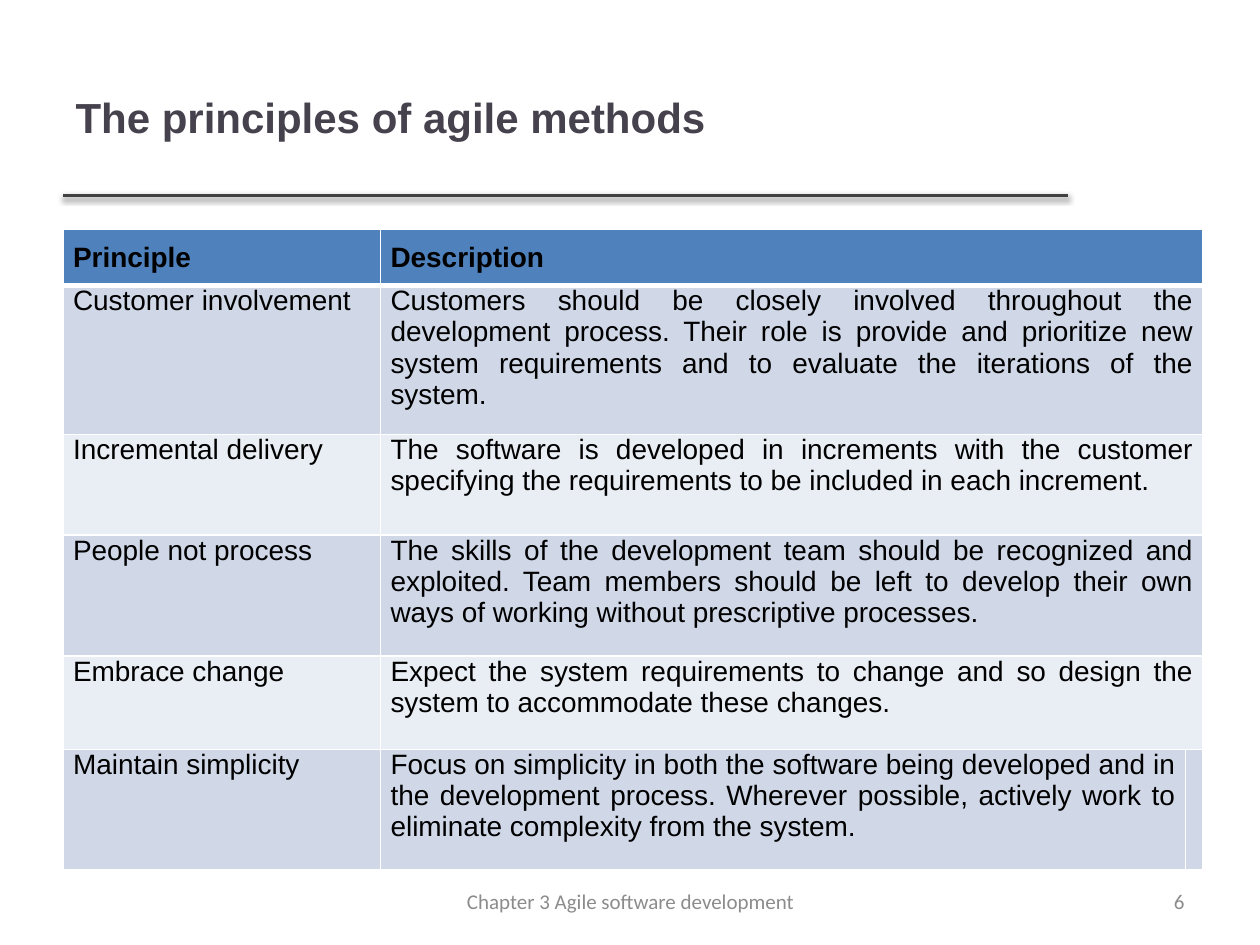
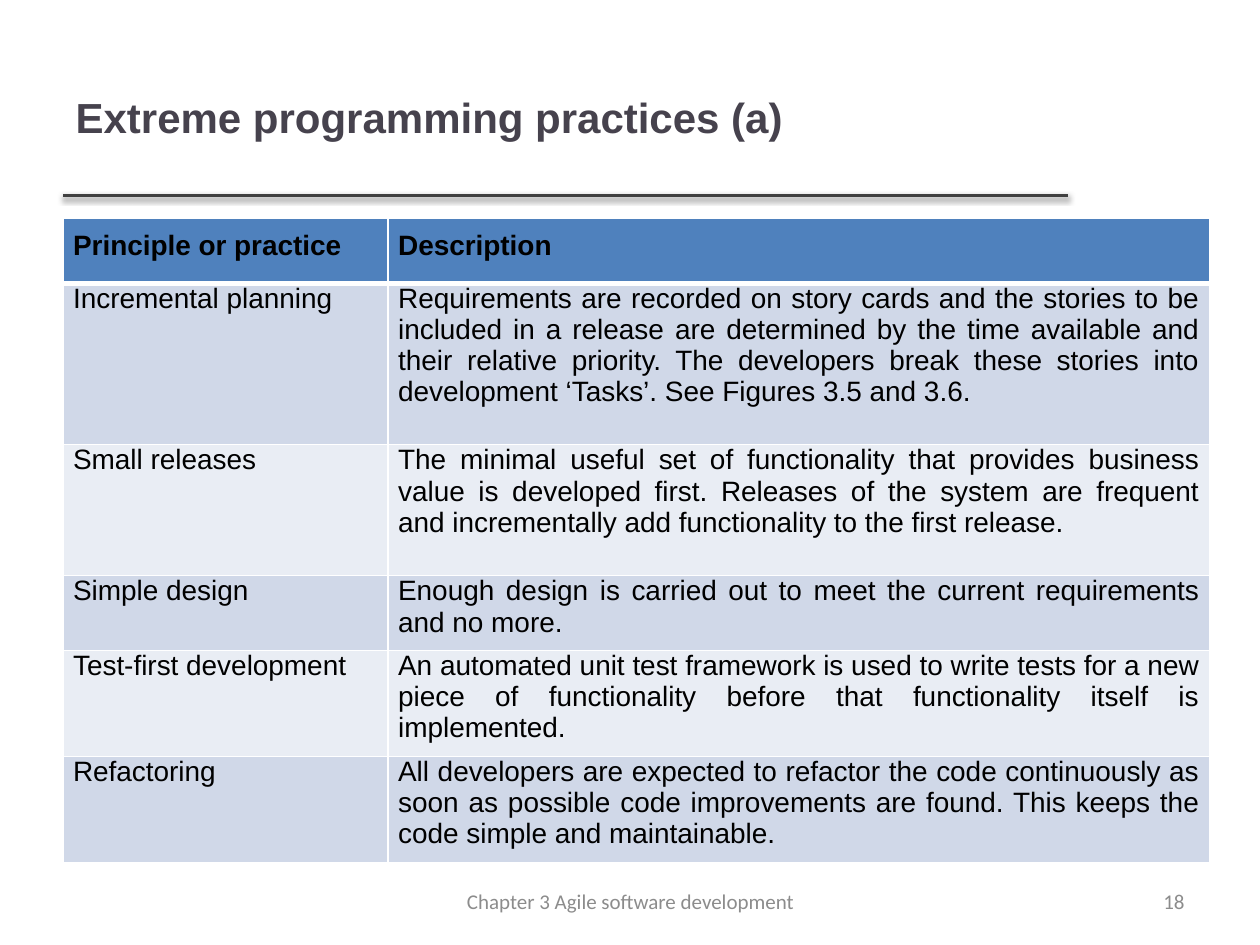
from collections import namedtuple

from lxml.etree import SubElement
from pptx import Presentation
from pptx.dml.color import RGBColor
from pptx.enum.shapes import MSO_CONNECTOR
from pptx.enum.text import MSO_ANCHOR, PP_ALIGN
from pptx.oxml import parse_xml
from pptx.oxml.ns import nsdecls, qn
from pptx.util import Inches, Pt

# The slide is a grid of 100 columns by 75 rows; every length is in its units.
COLS, ROWS = 100, 75
WIDE, HIGH = Inches(10), Inches(7.5)

TITLE = RGBColor(0x46, 0x42, 0x4D)
RULE = RGBColor(0x40, 0x40, 0x40)
HEAD = RGBColor(0x4F, 0x81, 0xBD)
DARK = RGBColor(0xD0, 0xD8, 0xE8)
LIGHT = RGBColor(0xE9, 0xED, 0xF4)
BLACK = RGBColor(0x00, 0x00, 0x00)
GREY = RGBColor(0x8C, 0x8C, 0x8C)
WHITE = RGBColor(0xFF, 0xFF, 0xFF)

Box = namedtuple("Box", "left top width height")
BAND = Box(5, 3, 79.8, 12.5)
FOOT = Box(34.2, 69.5, 31.7, 4)
PAGE = Box(71.7, 69.5, 23.3, 4)
PAD = 0.8
GAP = 1

AGILE = [
    ("Principle", "Description"),
    ("Customer involvement",
     "Customers should be closely involved throughout the development process. "
     "Their role is provide and prioritize new system requirements and to "
     "evaluate the iterations of the system."),
    ("Incremental delivery",
     "The software is developed in increments with the customer specifying the "
     "requirements to be included in each increment."),
    ("People not process",
     "The skills of the development team should be recognized and exploited. "
     "Team members should be left to develop their own ways of working without "
     "prescriptive processes."),
    ("Embrace change",
     "Expect the system requirements to change and so design the system to "
     "accommodate these changes."),
    ("Maintain simplicity",
     "Focus on simplicity in both the software being developed and in the "
     "development process. Wherever possible, actively work to eliminate "
     "complexity from the system."),
]

EXTREME = [
    ("Principle or practice", "Description"),
    ("Incremental planning",
     "Requirements are recorded on story cards and the stories to be included "
     "in a release are determined by the time available and their relative "
     "priority. The developers break these stories into development ‘Tasks’. "
     "See Figures 3.5 and 3.6."),
    ("Small releases",
     "The minimal useful set of functionality that provides business value is "
     "developed first. Releases of the system are frequent and incrementally "
     "add functionality to the first release."),
    ("Simple design",
     "Enough design is carried out to meet the current requirements and no "
     "more."),
    ("Test-first development",
     "An automated unit test framework is used to write tests for a new piece "
     "of functionality before that functionality itself is implemented."),
    ("Refactoring",
     "All developers are expected to refactor the code continuously as soon as "
     "possible code improvements are found. This keeps the code simple and "
     "maintainable."),
]


def across(cols):
    return round(WIDE * cols / COLS)


def down(rows):
    return round(HIGH * rows / ROWS)


def spots(box):
    return across(box.left), down(box.top), across(box.width), down(box.height)


def write(frame, text, face, size, color, align, bold=False):
    para = frame.paragraphs[0]
    para.alignment = align
    run = para.add_run()
    run.text = text
    run.font.name, run.font.size = face, Pt(size)
    run.font.bold = bold
    run.font.color.rgb = color


def add_title(slide, box, text):
    """Fill the title placeholder and rule a shadowed line under it."""
    title = slide.shapes.title
    title.left, title.top, title.width, title.height = spots(box)
    title.text_frame.vertical_anchor = MSO_ANCHOR.MIDDLE
    write(title.text_frame, text, "Arial", 24, TITLE, PP_ALIGN.LEFT, True)

    left, top, width, height = spots(box)
    base = top + height
    rule = slide.shapes.add_connector(
        MSO_CONNECTOR.STRAIGHT, left, base, left + width, base)
    rule.line.color.rgb = RULE
    rule.line.width = Pt(2)
    props = rule._element.spPr
    effects = SubElement(props, qn("a:effectLst"))
    effects.append(parse_xml(
        f'<a:outerShdw {nsdecls("a")} blurRad="{Pt(3.1)}" dist="{Pt(1.6)}" '
        'dir="5400000" rotWithShape="0"><a:srgbClr val="000000">'
        '<a:alpha val="38000"/></a:srgbClr></a:outerShdw>'))


def edge(cell, row):
    """Draw white borders, thick where the head row meets the body."""
    sides = {"L": 1, "R": 1, "T": 3 if row == 1 else 1, "B": 3 if row == 0 else 1}
    for spot, (side, width) in enumerate(sides.items()):
        cell._tc.get_or_add_tcPr().insert(spot, parse_xml(
            f'<a:ln{side} {nsdecls("a")} w="{Pt(width)}"><a:solidFill>'
            f'<a:srgbClr val="{WHITE}"/></a:solidFill></a:ln{side}>'))


def add_grid(slide, left, top, widths, heights, lines):
    """Place a table; a third column is joined to the second but in the last row."""
    box = Box(left, top, sum(widths), sum(heights))
    table = slide.shapes.add_table(len(heights), len(widths), *spots(box)).table
    for col, width in zip(table.columns, widths):
        col.width = across(width)
    for row, height in zip(table.rows, heights):
        row.height = down(height)

    for r, line in enumerate(lines):
        for c in range(len(widths)):
            cell = table.cell(r, c)
            cell.fill.solid()
            cell.fill.fore_color.rgb = HEAD if r == 0 else DARK if r % 2 else LIGHT
            edge(cell, r)
            filled = c < len(line)
            cell.margin_left = cell.margin_right = across(PAD if filled else 0)
            cell.margin_top = down(GAP if r == 0 else 0)
            cell.margin_bottom = down(GAP)
            if filled:
                write(cell.text_frame, line[c], "Arial", 16, BLACK,
                      PP_ALIGN.JUSTIFY, r == 0)
        if len(widths) > len(line) and r < len(lines) - 1:
            table.cell(r, 1).merge(table.cell(r, 2))


def add_note(slide, box, text, align):
    frame = slide.shapes.add_textbox(*spots(box)).text_frame
    frame.word_wrap = True
    frame.vertical_anchor = MSO_ANCHOR.MIDDLE
    write(frame, text, "Calibri", 12, GREY, align)


def add_page(deck, title, number, top, widths, heights, lines):
    slide = deck.slides.add_slide(deck.slide_layouts[5])
    add_title(slide, BAND, title)
    add_grid(slide, BAND.left, top, widths, heights, lines)
    add_note(slide, PAGE, number, PP_ALIGN.RIGHT)
    add_note(slide, FOOT, "Chapter 3 Agile software development", PP_ALIGN.CENTER)


def main():
    deck = Presentation()
    deck.slide_width, deck.slide_height = WIDE, HIGH
    add_page(deck, "The principles of agile methods", "6", 18.2,
             [25.2, 63.9, 1.4], [4.4, 11.8, 8, 9.6, 7.4, 9.6], AGILE)
    add_page(deck, "Extreme programming practices (a)", "18", 17.3,
             [25.8, 65.2], [5.2, 12.8, 10.4, 5.7, 8.1, 8.1], EXTREME)
    deck.save("out.pptx")


if __name__ == "__main__":
    main()
